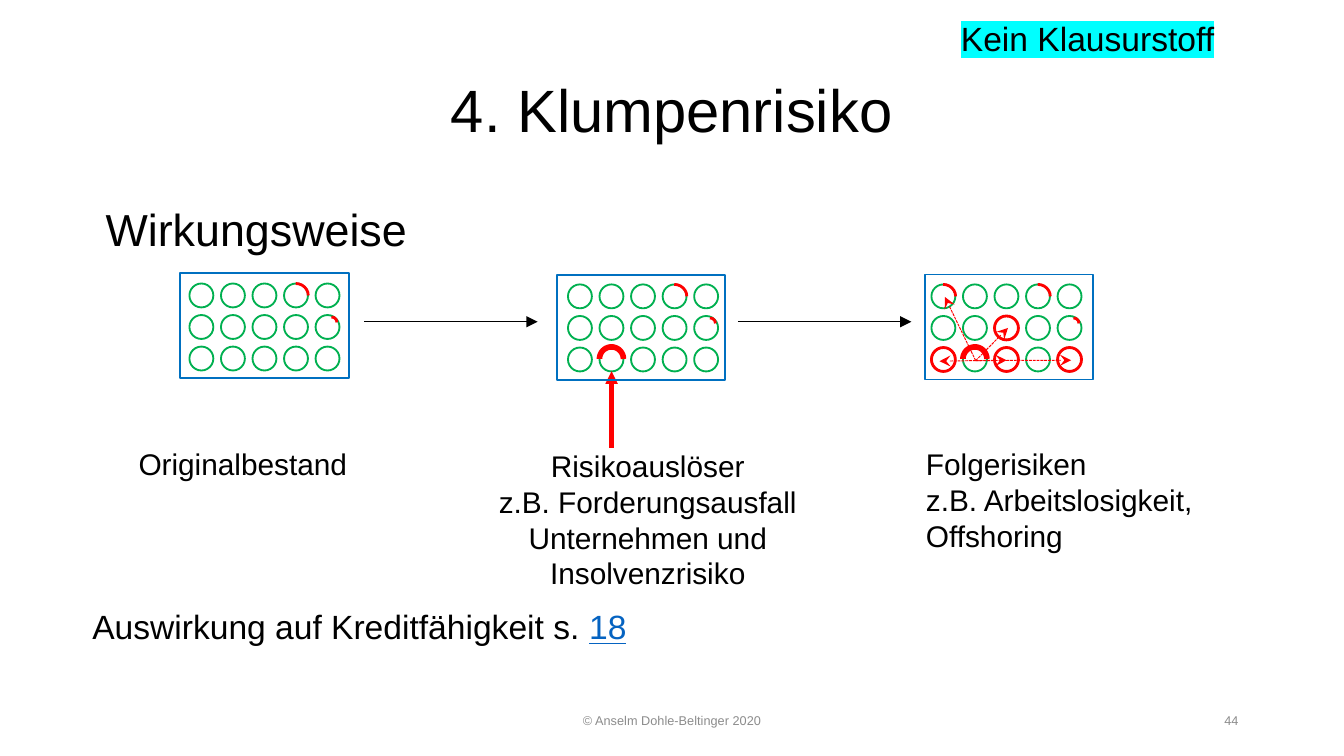
import math

from pptx import Presentation
from pptx.dml.color import RGBColor
from pptx.enum.dml import MSO_LINE
from pptx.enum.shapes import MSO_CONNECTOR, MSO_SHAPE
from pptx.enum.text import MSO_ANCHOR, PP_ALIGN
from pptx.oxml.ns import qn
from pptx.util import Pt
from lxml import etree

BLACK = RGBColor(0x00, 0x00, 0x00)
GREY = RGBColor(0x8C, 0x8C, 0x8C)
GREEN = RGBColor(0x00, 0xB0, 0x50)
RED = RGBColor(0xFF, 0x00, 0x00)
BLUE = RGBColor(0x00, 0x70, 0xC0)
LINK = RGBColor(0x05, 0x63, 0xC1)
CYAN = RGBColor(0x00, 0xFF, 0xFF)

LEFT, CENTER, RIGHT = PP_ALIGN.LEFT, PP_ALIGN.CENTER, PP_ALIGN.RIGHT
TOP, MIDDLE = MSO_ANCHOR.TOP, MSO_ANCHOR.MIDDLE
OVAL, ARC, RECT = MSO_SHAPE.OVAL, MSO_SHAPE.ARC, MSO_SHAPE.RECTANGLE
STRAIGHT = MSO_CONNECTOR.STRAIGHT
SYS_DASH = MSO_LINE.SQUARE_DOT

COLS, ROWS = 5, 3
PITCH, DIAMETER = 16.9, 12.8
STOCK_GRID, TRIGGER_GRID, FOLLOW_GRID = (101.5, 151.9), (304.3, 152.4), (499, 152.4)


class SlideBuilder:
    font = "Arial"

    def __init__(self, slide):
        self.slide = slide
        self.shapes = slide.shapes

    def text(self, x, y, w, h, lines, size, color=BLACK, align=LEFT,
             anchor=TOP, inset=(0, 0), spacing=None, before=0):
        """Add a text box and return its paragraphs; \\v breaks a line."""
        tf = self.shapes.add_textbox(Pt(x), Pt(y), Pt(w), Pt(h)).text_frame
        tf.word_wrap = True
        tf.vertical_anchor = anchor
        tf.margin_left = tf.margin_right = Pt(inset[0])
        tf.margin_top = tf.margin_bottom = Pt(inset[1])
        tf.text = "\n".join(lines)
        for p in tf.paragraphs:
            p.alignment = align
            p.line_spacing = spacing
            p.space_before = Pt(before)
            p.font.name = self.font
            p.font.size = Pt(size)
            p.font.color.rgb = color
        return tf.paragraphs

    def highlight(self, r, color):
        mark = etree.SubElement(r.font._element, qn("a:highlight"))
        etree.SubElement(mark, qn("a:srgbClr"), val=str(color))

    def outline(self, sp, color, width):
        sp.shadow.inherit = False
        sp.fill.background()
        sp.line.color.rgb = color
        sp.line.width = Pt(width)

    def shape(self, kind, x, y, w, h, color, width):
        sp = self.shapes.add_shape(kind, Pt(x), Pt(y), Pt(w), Pt(h))
        self.outline(sp, color, width)

    def circle(self, grid, col, row, color=GREEN, width=1):
        self.shape(OVAL, grid[0] + col * PITCH, grid[1] + row * PITCH,
                   DIAMETER, DIAMETER, color, width)

    def circles(self, grid):
        for row in range(ROWS):
            for col in range(COLS):
                self.circle(grid, col, row)

    def quarter(self, grid, col, row=0):
        self.shape(ARC, grid[0] + col * PITCH - 0.5, grid[1] + row * PITCH,
                   13.5, DIAMETER, RED, 1.5)

    def small_quarter(self, grid):
        self.shape(ARC, grid[0] + 4 * PITCH + 5.6, grid[1] + PITCH + 1, 5.8, 5.8, RED, 1.5)

    def arch(self, grid):
        """Mark the upper half of the circle that sets off the risk."""
        radius = DIAMETER / 2
        cx, cy = grid[0] + PITCH + radius, grid[1] + 2 * PITCH + radius - 0.3
        points = [(Pt(cx - radius * math.cos(math.pi * i / 24)),
                   Pt(cy - radius * math.sin(math.pi * i / 24))) for i in range(25)]
        builder = self.shapes.build_freeform(*points[0])
        builder.add_line_segments(points[1:], close=False)
        self.outline(builder.convert_to_shape(), RED, 3)

    def arrow(self, start, end, color, width, head="triangle", dash=None):
        sp = self.shapes.add_connector(STRAIGHT, *(Pt(v) for v in start + end))
        sp.line.color.rgb = color
        sp.line.width = Pt(width)
        if dash:
            sp.line.dash_style = dash
        etree.SubElement(sp.line._get_or_add_ln(), qn("a:tailEnd"), type=head)
        etree.SubElement(sp._element.spPr, qn("a:effectLst"))


def build():
    prs = Presentation()
    prs.slide_width, prs.slide_height = Pt(720), Pt(405)
    s = SlideBuilder(prs.slides.add_slide(prs.slide_layouts[6]))

    s.text(49.5, 21.6, 621, 78.3, ["4. Klumpenrisiko"], 32, align=CENTER,
           anchor=MIDDLE, inset=(7.2, 3.6), spacing=0.9)
    s.text(49.5, 107.8, 621, 257, ["Wirkungsweise"], 24,
           inset=(7.2, 3.6), spacing=0.9, before=5.6)
    s.text(238.5, 375.4, 243, 21.6, ["© Anselm Dohle-Beltinger 2020"], 6.8, GREY,
           CENTER, MIDDLE, (7.2, 3.6))
    s.text(508.5, 375.4, 162, 21.6, ["44"], 6.8, GREY, RIGHT, MIDDLE, (7.2, 3.6))

    for grid in (STOCK_GRID, TRIGGER_GRID, FOLLOW_GRID):
        s.circles(grid)
        s.quarter(grid, 3)
        s.small_quarter(grid)
    s.arch(TRIGGER_GRID)
    s.arch(FOLLOW_GRID)
    for col, row in ((2, 2), (2, 1), (4, 2), (0, 2)):
        s.circle(FOLLOW_GRID, col, row, RED, 1.5)
    s.quarter(FOLLOW_GRID, 0)

    s.text(74.2, 239, 118.8, 19.4, ["Originalbestand"], 16)
    s.text(266.4, 239.8, 161.3, 77.8,
           ["Risikoauslöser", "z.B. Forderungsausfall Unternehmen und Insolvenzrisiko"],
           16, align=CENTER)
    s.arrow((327.6, 239.8), (327.6, 198.9), RED, 2.25)
    s.text(496.1, 239, 146.2, 58.3,
           ["Folgerisiken \vz.B. Arbeitslosigkeit, Offshoring"], 16)

    for target in ((573.8, 193), (539.3, 193), (540, 175.7), (503.3, 193.5), (506.2, 159.1)):
        s.arrow((522.7, 193.2), target, RED, 0.5, "stealth", SYS_DASH)
    for x, y in ((96.6, 146.4), (495.5, 147.1), (298.2, 147.5)):
        s.shape(RECT, x, y, 90.2, 56.2, BLUE, 1)
    for x in (195.1, 395.3):
        s.arrow((x, 172.4), (x + 92.9, 172.4), BLACK, 0.5)

    p = s.text(49.5, 324.7, 357, 21.8, ["Auswirkung auf Kreditfähigkeit s. "], 18)[0]
    r = p.add_run()
    r.text = "18"
    r.font.color.rgb = LINK
    r.font.underline = True
    p = s.text(514.8, 9.4, 155.5, 21.8, ["Kein Klausurstoff"], 18)[0]
    s.highlight(p.runs[0], CYAN)

    prs.save("out.pptx")


if __name__ == "__main__":
    build()
